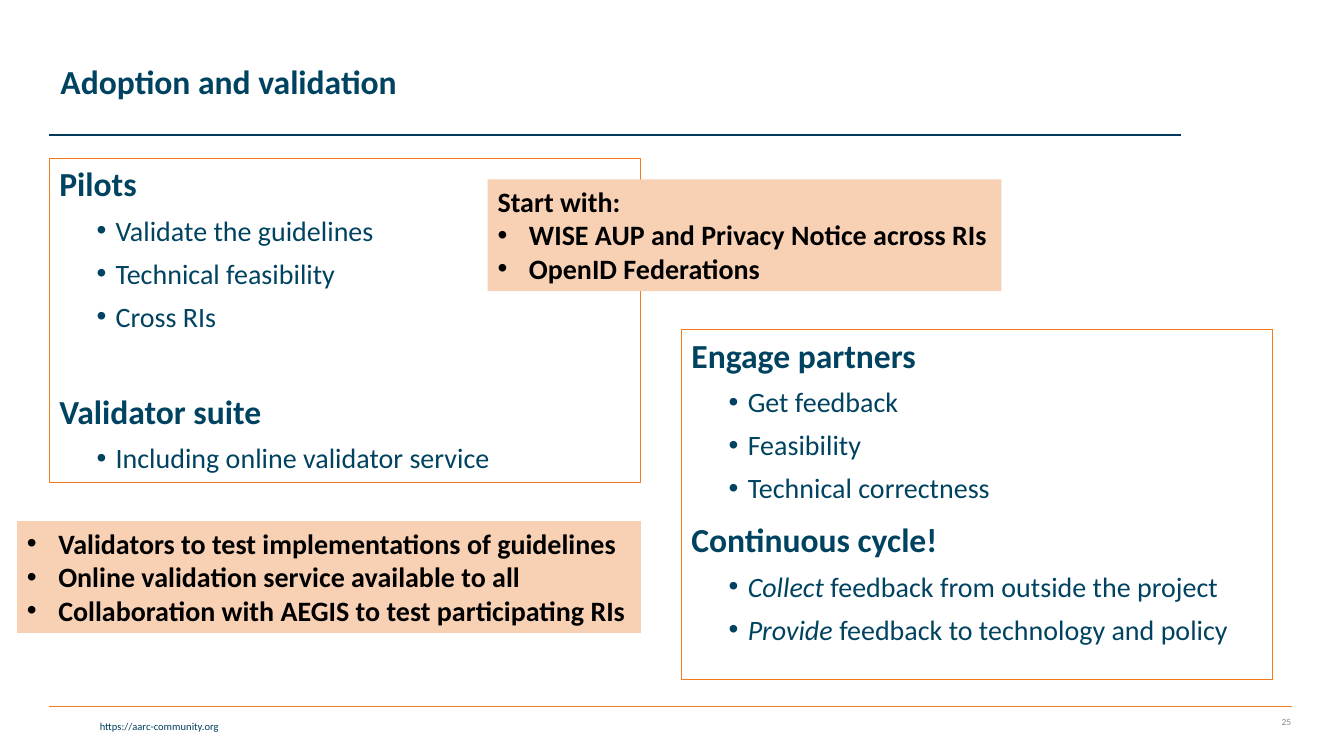
from lxml.etree import SubElement
from pptx import Presentation
from pptx.dml.color import RGBColor
from pptx.enum.shapes import MSO_CONNECTOR as Connector, MSO_SHAPE as Shape
from pptx.enum.text import MSO_ANCHOR as Anchor, MSO_AUTO_SIZE as AutoSize, PP_ALIGN as Align
from pptx.oxml.ns import qn
from pptx.util import Cm, Pt

COLORS = {"heading": "004360", "body": "004361", "footer": "003F5E", "number": "8C8C8C",
          "rule": "003959", "base_rule": "F57B20", "border": "F6791C",
          "callout": "F8D0B4", "callout_text": "000000"}
FONT = "Calibri"
PANEL_WIDTH, CALLOUT_HEIGHT = 14.91, 2.82

PILOTS = [("Pilots", ["Validate the guidelines", "Technical feasibility", "Cross RIs"]),
          ("Validator suite", ["Including online validator service"])]
PARTNERS = [("Engage partners", ["Get feedback", "Feasibility", "Technical correctness"]),
            ("Continuous cycle!", [("Collect", " feedback from outside the project"),
                                   ("Provide ", "feedback to technology and policy")])]
START_WITH = ["WISE AUP and Privacy Notice across RIs", "OpenID Federations"]
VALIDATORS = ["Validators to test implementations of guidelines",
              "Online validation service available to all",
              "Collaboration with AEGIS to test participating RIs"]


def color(key):
    """Return the named colour."""
    return RGBColor.from_string(COLORS[key])


def write(paragraph, text, size=20, ink="body", bold=False, italic=False, align=Align.LEFT,
          before=0, after=0):
    """Add a formatted run to a paragraph and set its alignment and spacing."""
    paragraph.alignment = align
    paragraph.space_before, paragraph.space_after = Pt(before), Pt(after)
    run = paragraph.add_run()
    run.text = text
    run.font.name, run.font.size = FONT, Pt(size)
    run.font.bold, run.font.italic = bold, italic
    run.font.color.rgb = color(ink)


def set_bullet(paragraph, margin=0.0, hanging=0.0):
    """Give a paragraph a hanging bullet, or none when nothing hangs."""
    properties = paragraph._p.get_or_add_pPr()
    properties.set("marL", str(Cm(margin)))
    properties.set("indent", str(-Cm(hanging)))
    if hanging:
        SubElement(properties, qn("a:buFont")).set("typeface", "Arial")
        SubElement(properties, qn("a:buChar")).set("char", "•")
    else:
        SubElement(properties, qn("a:buNone"))


def next_paragraph(frame):
    """Return the empty first paragraph of a frame, or a new one."""
    first = frame.paragraphs[0]
    return frame.add_paragraph() if first.runs else first


def place(shape, left, top, width, height):
    """Move a shape to its box in centimetres."""
    shape.left, shape.top, shape.width, shape.height = map(Cm, (left, top, width, height))


def add_rule(slide, left, top, width, ink):
    """Draw a horizontal rule."""
    rule = slide.shapes.add_connector(Connector.STRAIGHT, Cm(left), Cm(top),
                                      Cm(left + width), Cm(top))
    rule.line.color.rgb, rule.line.width = color(ink), Pt(1)
    SubElement(rule._element.spPr, qn("a:effectLst"))


def add_header(slide, left, top, width, height):
    """Place the title and the rule across its box."""
    title = slide.shapes.title
    place(title, left, top, width, height)
    title.text_frame.vertical_anchor = Anchor.MIDDLE
    title.text_frame.auto_size = AutoSize.NONE
    write(title.text_frame.paragraphs[0], "Adoption and validation", size=24, bold=True)
    add_rule(slide, left - 0.03, top + 3.2, 28.53, "rule")


def fill_panel(panel, box, sections, section_gap):
    """Fill an outlined body placeholder with headed bullet lists."""
    place(panel, *box)
    panel.line.color.rgb, panel.line.width = color("border"), Pt(0.75)
    frame = panel.text_frame
    frame.auto_size, frame.vertical_anchor = AutoSize.NONE, Anchor.TOP
    for number, (heading, points) in enumerate(sections):
        paragraph = next_paragraph(frame)
        set_bullet(paragraph)
        write(paragraph, heading, size=24, ink="heading", bold=True,
              before=section_gap if number else 0, after=3)
        for point in points:
            paragraph = next_paragraph(frame)
            paragraph.level = 1
            set_bullet(paragraph, 1.42, 0.48)
            emphasis, rest = point if isinstance(point, tuple) else ("", point)
            if emphasis:
                write(paragraph, emphasis, italic=True)
            write(paragraph, rest, before=3.8, after=3)


def add_callout(slide, left, top, width, height, points, lead=None):
    """Add a tinted box of bold bullets under an optional lead line."""
    callout = slide.shapes.add_shape(Shape.RECTANGLE, Cm(left), Cm(top), Cm(width), Cm(height))
    callout.shadow.inherit = False
    callout.fill.solid()
    callout.fill.fore_color.rgb = color("callout")
    callout.line.fill.background()
    frame = callout.text_frame
    frame.word_wrap, frame.vertical_anchor, frame.margin_right = True, Anchor.TOP, 0
    if lead:
        write(next_paragraph(frame), lead, ink="callout_text", bold=True)
    for point in points:
        paragraph = next_paragraph(frame)
        set_bullet(paragraph, 0.79, 0.79)
        write(paragraph, point, ink="callout_text", bold=True)


def add_label(slide, left, top, width, height, text, anchor=Anchor.TOP, **style):
    """Add a right-aligned line of small text."""
    label = slide.shapes.add_textbox(Cm(left), Cm(top), Cm(width), Cm(height))
    label.text_frame.word_wrap, label.text_frame.vertical_anchor = True, anchor
    write(label.text_frame.paragraphs[0], text, align=Align.RIGHT, **style)


def add_footer(slide, left, top, width):
    """Draw the base rule with the web address and page number below it."""
    add_rule(slide, left, top, width, "base_rule")
    add_label(slide, left - 0.53, top + 0.22, 5.05, 0.58, "https://aarc-community.org",
              size=7.5, ink="footer")
    add_label(slide, left + width - 1.83, top, 2.06, 0.76, "25", anchor=Anchor.MIDDLE,
              size=6.8, ink="number")


def main():
    """Build and save the slide."""
    deck = Presentation()
    deck.slide_width, deck.slide_height = Cm(33.87), Cm(19.05)
    slide = deck.slides.add_slide(deck.slide_layouts[3])
    add_header(slide, 1.27, 0.2, 26.7, 3.68)
    pilots, partners = slide.placeholders[1], slide.placeholders[2]
    fill_panel(pilots, (1.24, 3.99, PANEL_WIDTH, 8.18), PILOTS, section_gap=38.3)
    fill_panel(partners, (17.17, 8.31, PANEL_WIDTH, 8.81), PARTNERS, section_gap=7.5)
    add_callout(slide, 12.29, 4.52, 12.95, CALLOUT_HEIGHT, START_WITH, lead="Start with:")
    add_callout(slide, 0.43, 13.13, 15.72, CALLOUT_HEIGHT, VALIDATORS)
    add_footer(slide, 1.24, 17.81, 31.32)
    deck.save("out.pptx")


if __name__ == "__main__":
    main()
